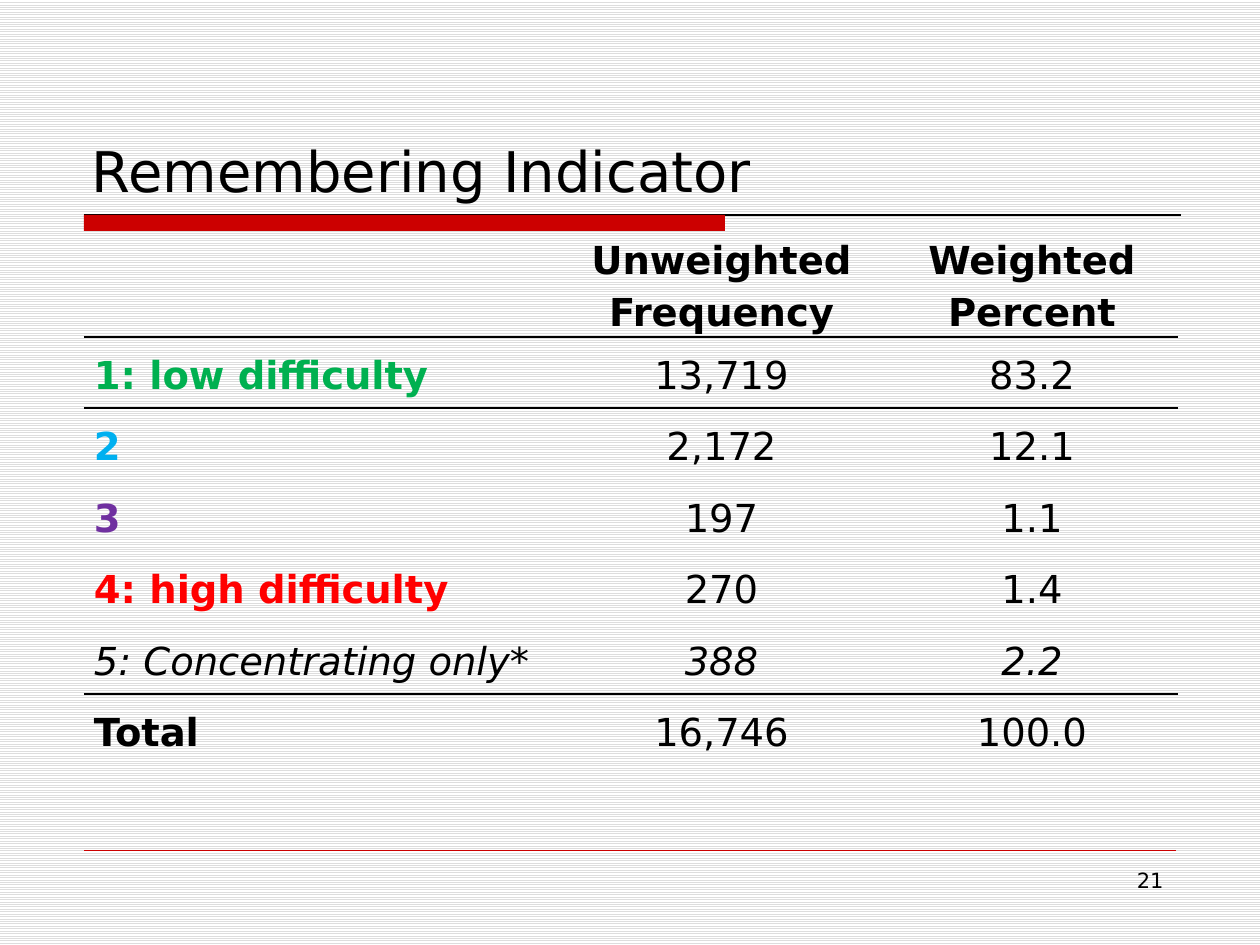
import dataclasses

import lxml.etree
import pptx
import pptx.dml.color
import pptx.enum.dml
import pptx.enum.shapes
import pptx.enum.text
import pptx.oxml
import pptx.oxml.ns
import pptx.util

EMU_PER_PX = 914400 / 126
ALIGN = pptx.enum.text.PP_ALIGN
ANCHOR = pptx.enum.text.MSO_ANCHOR
NO_TABLE_STYLE = "{2D5ABB26-0587-4C30-8999-92F81FD0307C}"


@dataclasses.dataclass(frozen=True)
class Theme:
    font: str = "DejaVu Sans"
    ink: str = "000000"
    accent: str = "CC0000"
    paper: str = "FFFFFF"
    stripe: str = "DDDDDD"
    low: str = "00B050"
    second: str = "00B0F0"
    third: str = "7030A0"
    high: str = "FF0000"
    title: int = 32
    body: int = 22
    small: int = 12
    spacing: float = 1.15


def px(*values):
    return [pptx.util.Emu(round(v * EMU_PER_PX)) for v in values]


def rgb(value):
    return pptx.dml.color.RGBColor.from_string(value)


def apply(obj, values):
    for name, value in values.items():
        setattr(obj, name, value)


class SlideBuilder:
    def __init__(self, prs, theme):
        self.theme = theme
        self.s = prs.slides.add_slide(prs.slide_layouts[5])

    def background(self):
        fill = self.s.background.fill
        fill.patterned()
        fill.pattern = pptx.enum.dml.MSO_PATTERN.LIGHT_HORIZONTAL
        fill.fore_color.rgb = rgb(self.theme.stripe)
        fill.back_color.rgb = rgb(self.theme.paper)

    def run(self, p, text, size, color=None, align=ALIGN.LEFT, **font):
        p.alignment = align
        r = p.add_run()
        r.text = text
        apply(r.font, {"name": self.theme.font, "size": pptx.util.Pt(size), **font})
        r.font.color.rgb = rgb(color or self.theme.ink)

    def title(self, text, *box):
        sp = self.s.shapes.title
        apply(sp, dict(zip(("left", "top", "width", "height"), px(*box))))
        tf = sp.text_frame
        apply(tf, {"vertical_anchor": ANCHOR.BOTTOM, "word_wrap": True})
        self.run(tf.paragraphs[0], text, self.theme.title)

    def text(self, text, size, align, *box):
        tf = self.s.shapes.add_textbox(*px(*box)).text_frame
        tf.word_wrap = True
        self.run(tf.paragraphs[0], text, size, align=align)

    def bar(self, color, *box):
        sp = self.s.shapes.add_shape(pptx.enum.shapes.MSO_SHAPE.RECTANGLE, *px(*box))
        sp.shadow.inherit = False
        sp.fill.solid()
        sp.fill.fore_color.rgb = rgb(color)
        sp.line.fill.background()

    def rule(self, color, width, x1, x2, y):
        kind = pptx.enum.shapes.MSO_CONNECTOR.STRAIGHT
        line = self.s.shapes.add_connector(kind, *px(x1, y, x2, y))
        line.line.color.rgb = rgb(color)
        line.line.width = pptx.util.Pt(width)
        sp_pr = line._element.spPr
        lxml.etree.SubElement(sp_pr, pptx.oxml.ns.qn("a:effectLst"))

    def border(self, cell, side):
        ln = pptx.oxml.parse_xml(
            f'<a:{side} {pptx.oxml.ns.nsdecls("a")} w="12700"><a:solidFill>'
            f'<a:srgbClr val="{self.theme.ink}"/></a:solidFill></a:{side}>')
        cell._tc.get_or_add_tcPr().insert(0, ln)

    def table(self, rows, widths, heights, ruled_after, left, top):
        frame = self.s.shapes.add_table(
            len(rows), len(widths), *px(left, top, sum(widths), sum(heights)))
        table = frame.table
        apply(table, {"first_row": False, "horz_banding": False})
        table._tbl.tblPr.find(pptx.oxml.ns.qn("a:tableStyleId")).text = NO_TABLE_STYLE
        for col, width in zip(table.columns, px(*widths)):
            col.width = width
        for row, height in zip(table.rows, px(*heights)):
            row.height = height
        side, none = px(10, 0)
        for i, (texts, label_font, value_font) in enumerate(rows):
            for j, text in enumerate(texts):
                cell = table.cell(i, j)
                apply(cell, {"margin_left": side, "margin_right": side,
                             "margin_top": none, "margin_bottom": none,
                             "vertical_anchor": ANCHOR.MIDDLE})
                cell.fill.background()
                if i in ruled_after:
                    self.border(cell, "lnB")
                if i - 1 in ruled_after:
                    self.border(cell, "lnT")
                if not text:
                    continue
                tf = cell.text_frame
                for n, line in enumerate(text.split("\n")):
                    p = tf.add_paragraph() if n else tf.paragraphs[0]
                    p.line_spacing = self.theme.spacing
                    self.run(p, line, self.theme.body,
                             align=ALIGN.CENTER if j else ALIGN.LEFT,
                             **(value_font if j else label_font))


def main():
    theme = Theme()
    prs = pptx.Presentation()
    prs.slide_width, prs.slide_height = px(1260, 945)
    b = SlideBuilder(prs, theme)
    b.background()

    # Title with its bar and rule
    b.rule(theme.ink, 0.75, 84, 1181, 215)
    b.bar(theme.accent, 84, 215, 641, 16)
    b.title("Remembering Indicator", 79, 42, 1103, 168)

    # Frequency table: cells, label font, value font
    bold, italic = {"bold": True}, {"italic": True}
    rows = [
        (("", "Unweighted\nFrequency", "Weighted Percent"), bold, bold),
        (("1: low difficulty", "13,719", "83.2"), {**bold, "color": theme.low}, {}),
        (("2", "2,172", "12.1"), {**bold, "color": theme.second}, {}),
        (("3", "197", "1.1"), {**bold, "color": theme.third}, {}),
        (("4: high difficulty", "270", "1.4"), {**bold, "color": theme.high}, {}),
        (("5: Concentrating only*", "388", "2.2"), italic, italic),
        (("Total", "16,746", "100.0"), bold, {}),
    ]
    body_rows, body_height = len(rows) - 1, 429
    edges = [body_height * i // body_rows for i in range(body_rows + 1)]
    heights = [106] + [lower - upper for upper, lower in zip(edges, edges[1:])]
    b.table(rows, (473, 329, 292), heights, (0, 5), 84, 231)

    # Footer
    b.rule(theme.accent, 0.25, 84, 1176, 850)
    b.text("21", theme.small, ALIGN.RIGHT, 903, 861, 273, 66)

    prs.save("out.pptx")


if __name__ == "__main__":
    main()
